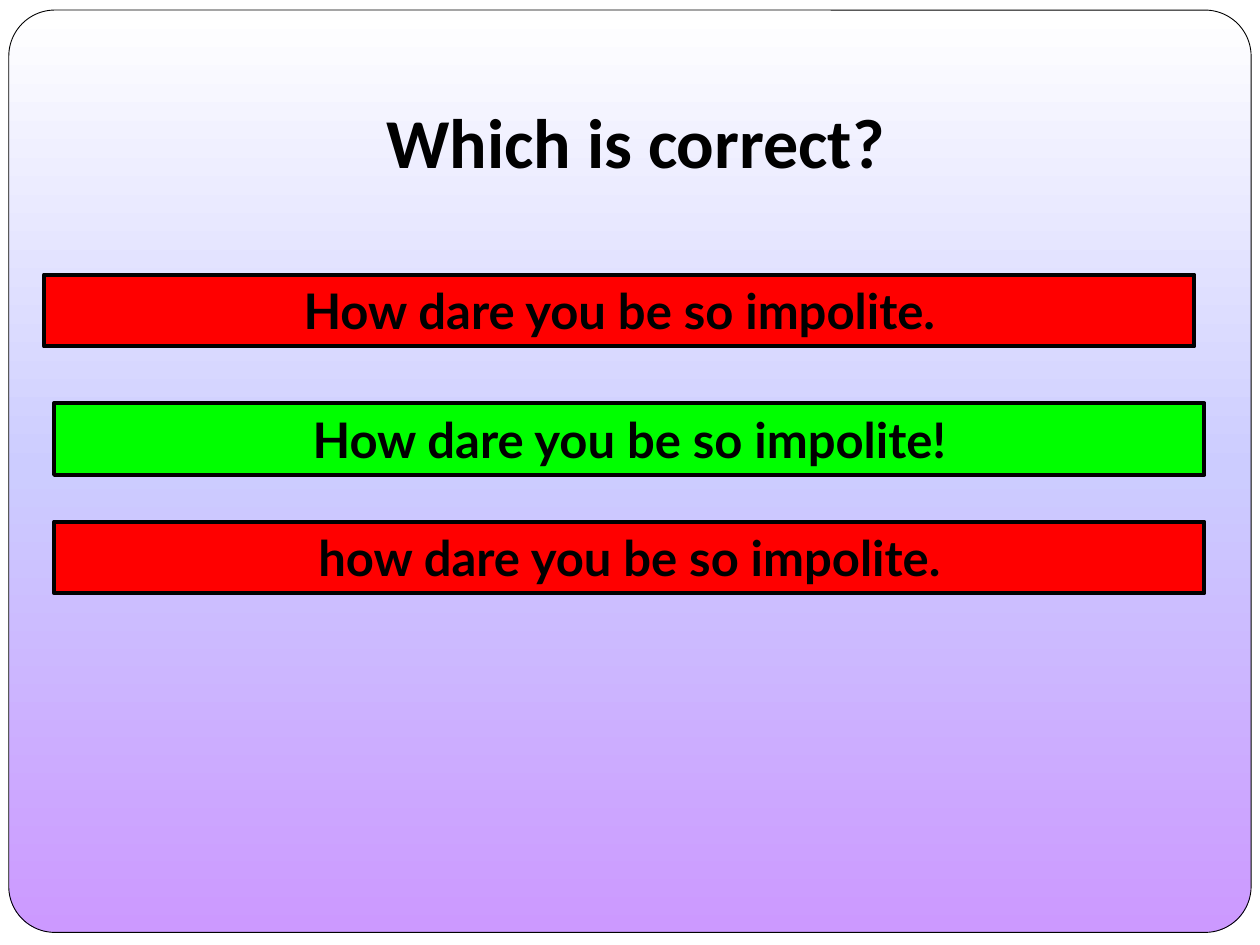
"""Build a quiz slide that asks which of three sentences is correct."""
from copy import deepcopy
from pptx import Presentation
from pptx.dml.color import RGBColor as Rgb
from pptx.enum.shapes import MSO_SHAPE as Shape
from pptx.enum.text import MSO_ANCHOR as Anchor, MSO_AUTO_SIZE as Fit, PP_ALIGN as Align
from pptx.util import Inches, Pt

THEME = {
    "ink": Rgb.from_string("000000"),
    "paper": Rgb.from_string("FFFFFF"),
    "wrong": Rgb.from_string("FF0000"),
    "right": Rgb.from_string("00FF00"),
    "gradient": [(0, "FFFFFF"), (0.5, "CCCCFF"), (1, "CC99FF")],
    "title": {"name": "Calibri", "size": Pt(40), "bold": True},
    "answer": {"name": "Lato", "size": Pt(28), "bold": True},
}
ANSWERS = [
    ("How dare you be so impolite.", "wrong", 0.35, 2.18),
    ("How dare you be so impolite!", "right", 0.43, 3.2),
    ("how dare you be so impolite.", "wrong", 0.43, 4.14),
]


def write(box, text, style, anchor, fit):
    """Put one centred, styled line of text in a box."""
    frame = box.text_frame
    for name, value in {"word_wrap": True, "vertical_anchor": anchor, "auto_size": fit}.items():
        setattr(frame, name, value)
    para = frame.paragraphs[0]
    para.alignment = Align.CENTER
    span = para.add_run()
    span.text = text
    for name, value in THEME[style].items():
        setattr(span.font, name, value)
    span.font.color.rgb = THEME["ink"]
    return frame


def add_box(page, kind, place, line_width):
    """Add an outlined shape without a shadow."""
    box = page.shapes.add_shape(kind, *map(Inches, place))
    box.shadow.inherit = False
    box.line.color.rgb = THEME["ink"]
    box.line.width = Pt(line_width)
    return box


deck = Presentation()
deck.slide_width, deck.slide_height = Inches(10), Inches(7.5)
page = deck.slides.add_slide(deck.slide_layouts[5])
page.background.fill.solid()
page.background.fill.fore_color.rgb = THEME["paper"]

panel = add_box(page, Shape.ROUNDED_RECTANGLE, (0.07, 0.08, 9.86, 7.32), 0.5)
panel.adjustments[0] = 0.05
panel.fill.gradient()
panel.fill.gradient_angle = 270
stop_list = panel.fill._fill._gradFill.gsLst
stop_list.append(deepcopy(stop_list[-1]))
for stop, (position, color) in zip(panel.fill.gradient_stops, THEME["gradient"]):
    stop.position = position
    stop.color.rgb = Rgb.from_string(color)

title = page.shapes.title
panel._element.addnext(title._element)
for name, value in {"left": 0.59, "top": 0.3, "width": 8.91, "height": 1.25}.items():
    setattr(title, name, Inches(value))
frame = write(title, "Which is correct?", "title", Anchor.BOTTOM, Fit.NONE)
frame.margin_bottom = Inches(0.1)

for text, verdict, left, top in ANSWERS:
    box = add_box(page, Shape.RECTANGLE, (left, top, 9.13, 0.57), 2.25)
    box.fill.solid()
    box.fill.fore_color.rgb = THEME[verdict]
    write(box, text, "answer", Anchor.TOP, Fit.SHAPE_TO_FIT_TEXT)

deck.save("out.pptx")
